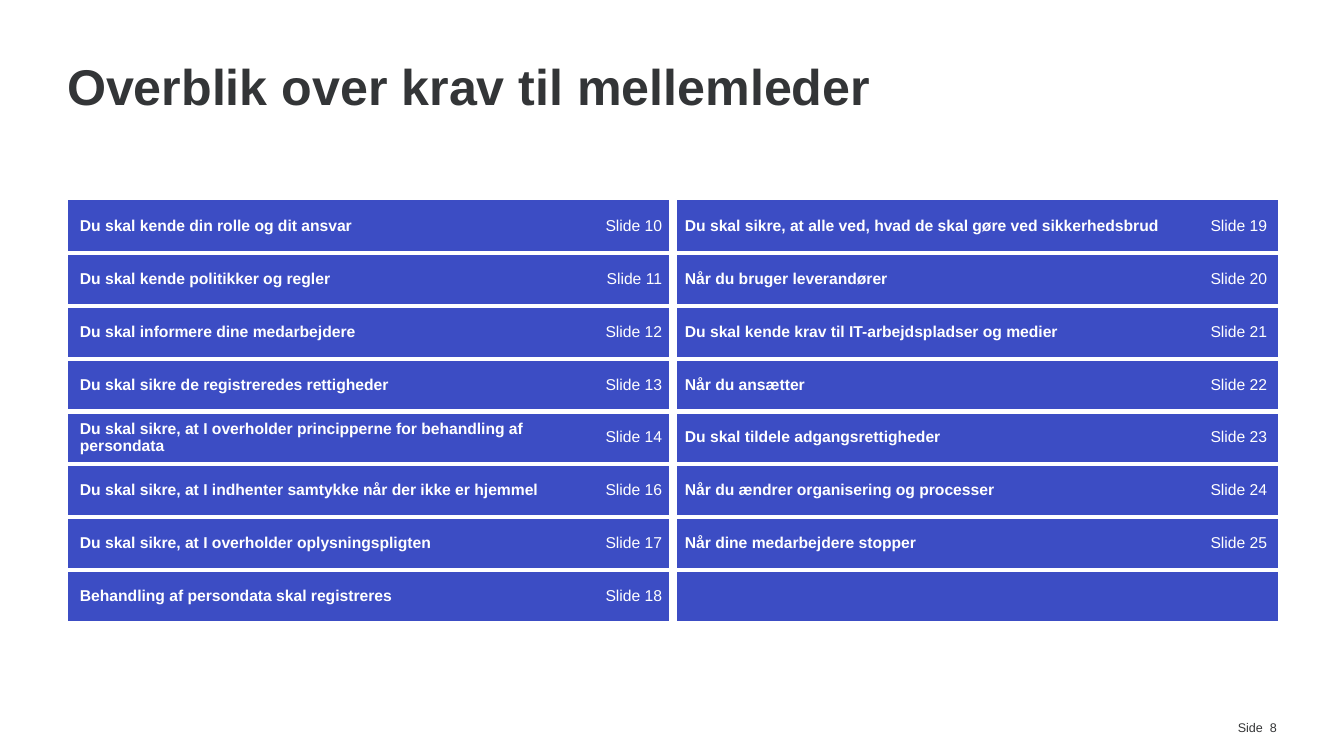
"""Build the slide that lists the requirements for middle managers."""
from lxml import etree
from pptx import Presentation
from pptx.dml.color import RGBColor
from pptx.enum.text import MSO_ANCHOR, PP_ALIGN
from pptx.oxml.ns import qn
from pptx.util import Pt

TITLE = "Overblik over krav til mellemleder"
PAGE_NUMBER = "Side  8"
LEFT_TOPICS = [
    ("Du skal kende din rolle og dit ansvar", "Slide 10"),
    ("Du skal kende politikker og regler", "Slide 11"),
    ("Du skal informere dine medarbejdere", "Slide 12"),
    ("Du skal sikre de registreredes rettigheder", "Slide 13"),
    ("Du skal sikre, at I overholder principperne for behandling af persondata", "Slide 14"),
    ("Du skal sikre, at I indhenter samtykke når der ikke er hjemmel", "Slide 16"),
    ("Du skal sikre, at I overholder oplysningspligten", "Slide 17"),
    ("Behandling af persondata skal registreres", "Slide 18"),
]
RIGHT_TOPICS = [
    ("Du skal sikre, at alle ved, hvad de skal gøre ved sikkerhedsbrud", "Slide 19"),
    ("Når du bruger leverandører", "Slide 20"),
    ("Du skal kende krav til IT-arbejdspladser og medier", "Slide 21"),
    ("Når du ansætter", "Slide 22"),
    ("Du skal tildele adgangsrettigheder", "Slide 23"),
    ("Når du ændrer organisering og processer", "Slide 24"),
    ("Når dine medarbejdere stopper", "Slide 25"),
    ("", ""),
]

PX = 8096
FONT = "Arial"
BLUE = RGBColor(0x3C, 0x4D, 0xC4)
WHITE = RGBColor(0xFF, 0xFF, 0xFF)
TITLE_GREY = RGBColor(0x33, 0x35, 0x37)
FOOTER_GREY = RGBColor(0x34, 0x35, 0x36)
LEFT, RIGHT = PP_ALIGN.LEFT, PP_ALIGN.RIGHT
TOP, MIDDLE = MSO_ANCHOR.TOP, MSO_ANCHOR.MIDDLE
NO_STYLE = "{2D5ABB26-0587-4C30-8999-92F81FD0307C}"

TABLE_LEFT, TABLE_TOP, TABLE_HEIGHT = 68, 200, 423
COLUMN_WIDTHS = (516, 89, 516, 89)
MARGIN_LEFT, MARGIN_RIGHT = 12, 11
ROW_GAP, COLUMN_GAP = 3, 6


def write(frame, text, size, color, bold=False, align=LEFT, spacing=1.0):
    para = frame.paragraphs[0]
    para.alignment = align
    para.line_spacing = spacing
    span = para.add_run()
    span.text = text
    span.font.name = FONT
    span.font.size = Pt(size)
    span.font.bold = bold
    span.font.color.rgb = color


def add_text_box(page, bounds, anchor, *text, **style):
    box = page.shapes.add_textbox(*(length * PX for length in bounds))
    frame = box.text_frame
    frame.word_wrap = True
    frame.vertical_anchor = anchor
    frame.margin_left = frame.margin_right = frame.margin_top = frame.margin_bottom = 0
    write(frame, *text, **style)


def add_border(cell, side, points):
    properties = cell._tc.get_or_add_tcPr()
    line = etree.SubElement(properties, qn(f"a:ln{side}"), w=str(Pt(points)))
    if points:
        fill = etree.SubElement(line, qn("a:solidFill"))
        etree.SubElement(fill, qn("a:srgbClr"), val=str(WHITE))
    else:
        etree.SubElement(line, qn("a:noFill"))


def add_topic_table(page):
    rows = [left + right for left, right in zip(LEFT_TOPICS, RIGHT_TOPICS)]
    frame = page.shapes.add_table(
        len(rows), len(COLUMN_WIDTHS), TABLE_LEFT * PX, TABLE_TOP * PX,
        sum(COLUMN_WIDTHS) * PX, TABLE_HEIGHT * PX)
    table = frame.table
    table.first_row = table.horz_banding = False
    table._tbl.tblPr.find(qn("a:tableStyleId")).text = NO_STYLE
    for column, width in zip(table.columns, COLUMN_WIDTHS):
        column.width = width * PX
    for row_index, texts in enumerate(rows):
        table.rows[row_index].height = TABLE_HEIGHT * PX // len(rows)
        for column_index, text in enumerate(texts):
            cell = table.cell(row_index, column_index)
            cell.margin_left = MARGIN_LEFT * PX
            cell.margin_right = MARGIN_RIGHT * PX
            cell.vertical_anchor = MIDDLE
            add_border(cell, "L", COLUMN_GAP if column_index == 2 else 0)
            add_border(cell, "R", COLUMN_GAP if column_index == 1 else 0)
            add_border(cell, "T", ROW_GAP if row_index else 0)
            add_border(cell, "B", ROW_GAP)
            cell.fill.solid()
            cell.fill.fore_color.rgb = BLUE
            if text:
                is_topic = column_index % 2 == 0
                write(cell.text_frame, text, 10, WHITE, bold=is_topic,
                      align=LEFT if is_topic else RIGHT, spacing=0.95)


def main():
    deck = Presentation()
    deck.slide_width, deck.slide_height = 1344 * PX, 756 * PX
    page = deck.slides.add_slide(deck.slide_layouts[6])
    add_text_box(page, (1108, 720, 169, 16), MIDDLE, PAGE_NUMBER, 8, FOOTER_GREY, align=RIGHT)
    add_text_box(page, (67, 62, 1209, 62), TOP, TITLE, 32, TITLE_GREY, bold=True, spacing=0.9)
    add_topic_table(page)
    deck.save("out.pptx")


if __name__ == "__main__":
    main()
